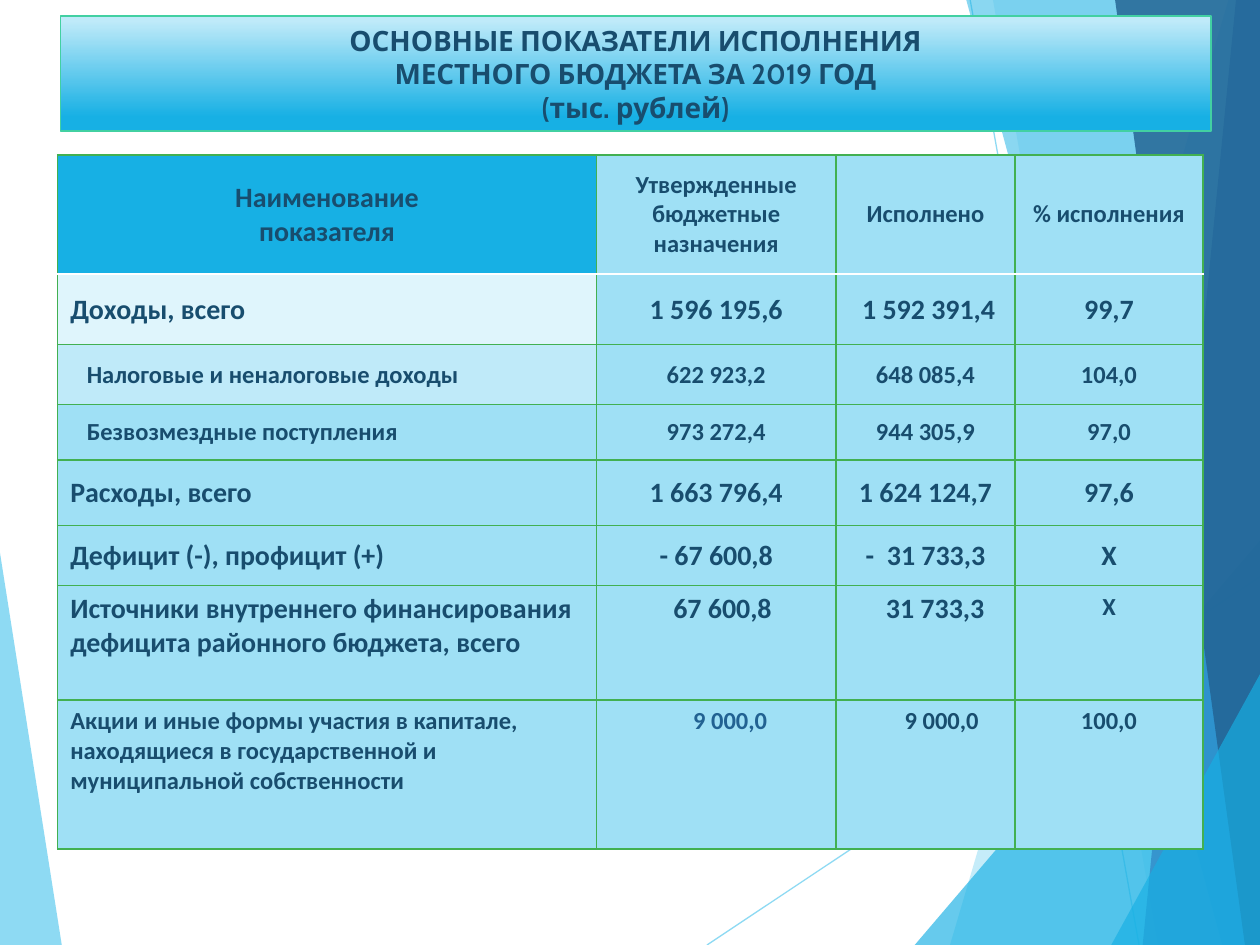
from lxml import etree
from pptx import Presentation
from pptx import util as u
from pptx.dml.color import RGBColor
from pptx.enum import shapes, text
from pptx.oxml import ns

Pt = u.Pt
WIDTH, HEIGHT = 720, 540
COLORS = {
    "text": "184D6E", "accent_text": "226292", "border": "42B051",
    "white": "FFFFFF", "title_line": "42D0A2", "title_top": "BFEAF9",
    "azure": "17B0E4", "sky": "5FCBEF", "blue": "2E83C3", "navy": "226292",
    "cell": "9FE0F5", "total": "DFF5FC", "tax": "BFEAF9",
}
CENTER, LEFT = text.PP_ALIGN.CENTER, text.PP_ALIGN.LEFT

# Background facets: points, colour, opacity in percent
LEFT_FACET = ([(0, 316), (35.3, 540), (0, 540)], "sky", 70)
RIGHT_FACETS = [  # top x (or y on the right edge), bottom x
    ((702, 0), 542.9, "sky", 36),
    ((567.4, 0), 661.7, "sky", 20),
    ((720, 308.9), 522.7, "azure", 66),
    ((552.2, 0), 698.4, "azure", 50),
    ((706.3, 0), 653, "blue", 70),
    ((637.2, 0), 711.4, "navy", 82),
    ((720, 385.2), 635, "azure", 66),
]
BACK_LINES = [((404, 540), (720, 329.5)), ((554.4, 0), (650.9, 540))]

TITLE = ["ОСНОВНЫЕ ПОКАЗАТЕЛИ ИСПОЛНЕНИЯ",
         "МЕСТНОГО БЮДЖЕТА ЗА 2019 ГОД", "(тыс. рублей)"]
COLUMN_WIDTHS = [307.8, 137, 102.2, 107.5]
ROW_HEIGHTS = [68.2, 40.3, 34.3, 31.7, 37.4, 34.3, 65.5, 85.1]
ROW_SIZES = [14, 16, 14, 14, 16, 16, 16, 14]
ROWS = [
    ["Наименование\nпоказателя", "Утвержденные бюджетные\nназначения",
     "Исполнено", "% исполнения"],
    ["Доходы, всего", "1 596 195,6", "1 592 391,4", "99,7"],
    ["Налоговые и неналоговые доходы", "622 923,2", "648 085,4", "104,0"],
    ["Безвозмездные поступления", "973 272,4", "944 305,9", "97,0"],
    ["Расходы, всего", "1 663 796,4", "1 624 124,7", "97,6"],
    ["Дефицит (-), профицит (+)", "- 67 600,8", "-  31 733,3", "Х"],
    ["Источники внутреннего финансирования дефицита районного бюджета, всего",
     "67 600,8", "31 733,3", "Х"],
    ["Акции и иные формы участия в капитале, находящиеся в государственной "
     "и муниципальной собственности", "9 000,0", "9 000,0", "100,0"],
]
# Exceptions by (row, column)
FILLS = {(0, 0): "azure", (1, 0): "total", (2, 0): "tax"}
SIZES = {(0, 0): 16, (6, 3): 14}
INDENTS = {(1, 2): 3.6, (2, 0): 9.4, (3, 0): 9.4, (6, 1): 7.2,
           (6, 2): 11, (7, 1): 16, (7, 2): 32}
TEXT_COLORS = {(7, 1): "accent_text"}
LEFT_ALIGNED = {(7, 2)}


def rgb(name):
    return RGBColor.from_string(COLORS[name])


def set_opacity(shape, percent):
    for color in shape.element.spPr.iter(ns.qn("a:srgbClr")):
        etree.SubElement(color, ns.qn("a:alpha"), val=str(percent * 1000))


def add_facet(slide, points, color, opacity):
    corners = [(Pt(x), Pt(y)) for x, y in points]
    builder = slide.shapes.build_freeform(*corners[0])
    builder.add_line_segments(corners[1:], close=True)
    shape = builder.convert_to_shape()
    shape.shadow.inherit = False
    shape.line.fill.background()
    shape.fill.solid()
    shape.fill.fore_color.rgb = rgb(color)
    set_opacity(shape, opacity)


def add_back_line(slide, start, end):
    line = slide.shapes.add_connector(
        shapes.MSO_CONNECTOR.STRAIGHT, *(Pt(v) for v in start + end))
    line.line.color.rgb = rgb("sky")
    line.line.width = Pt(0.75)
    set_opacity(line, 70)
    etree.SubElement(line.element.spPr, ns.qn("a:effectLst"))


def write_lines(frame, lines, font, size, color, align):
    for index, line in enumerate(lines):
        paragraph = frame.paragraphs[0] if index == 0 else frame.add_paragraph()
        paragraph.alignment = align
        run = paragraph.add_run()
        run.text = line
        run.font.name, run.font.size, run.font.bold = font, Pt(size), True
        run.font.color.rgb = rgb(color)


def format_title(title):
    title.left, title.top = Pt(34.5), Pt(9.2)
    title.width, title.height = Pt(657.5), Pt(65.5)
    title.fill.gradient()
    title.fill.gradient_angle = 270
    stops = zip(title.fill.gradient_stops, [("title_top", 0.04), ("azure", 0.88)])
    for stop, (color, position) in stops:
        stop.color.rgb, stop.position = rgb(color), position
    title.line.color.rgb = rgb("title_line")
    title.line.width = Pt(1)
    frame = title.text_frame
    frame.auto_size = text.MSO_AUTO_SIZE.NONE
    frame.word_wrap = True
    frame.vertical_anchor = text.MSO_ANCHOR.MIDDLE
    write_lines(frame, TITLE, "Cabin", 16, "text", CENTER)
    # Bring the title in front of the facets
    title.element.getparent().append(title.element)


def set_borders(cell, sides):
    properties = cell._tc.get_or_add_tcPr()
    for index, (side, (color, width)) in enumerate(sides.items()):
        line = etree.Element(ns.qn(f"a:ln{side}"), w=str(Pt(width)))
        fill = etree.SubElement(line, ns.qn("a:solidFill"))
        etree.SubElement(fill, ns.qn("a:srgbClr"), val=COLORS[color])
        properties.insert(index, line)


def format_cell(cell, row, column):
    key = (row, column)
    cell.fill.solid()
    cell.fill.fore_color.rgb = rgb(FILLS.get(key, "cell"))
    cell.margin_left = Pt(7.2 + INDENTS.get(key, 0))
    cell.vertical_anchor = text.MSO_ANCHOR.MIDDLE if row < 6 else text.MSO_ANCHOR.TOP
    is_label = column == 0 and row > 0
    align = LEFT if is_label or key in LEFT_ALIGNED else CENTER
    write_lines(cell.text_frame, ROWS[row][column].split("\n"), "Calibri",
                SIZES.get(key, ROW_SIZES[row]), TEXT_COLORS.get(key, "text"), align)
    borders = dict.fromkeys("LRTB", ("border", 1))
    if row < 2:  # white rule under the header
        borders["B" if row == 0 else "T"] = ("white", 1.5)
    set_borders(cell, borders)


def add_budget_table(slide):
    table = slide.shapes.add_table(
        len(ROWS), len(COLUMN_WIDTHS), Pt(33), Pt(88.5),
        Pt(sum(COLUMN_WIDTHS)), Pt(sum(ROW_HEIGHTS))).table
    table.first_row = table.horz_banding = False
    for column, width in zip(table.columns, COLUMN_WIDTHS):
        column.width = Pt(width)
    for row, height in enumerate(ROW_HEIGHTS):
        table.rows[row].height = Pt(height)
        for column in range(len(COLUMN_WIDTHS)):
            format_cell(table.cell(row, column), row, column)


def main():
    presentation = Presentation()
    presentation.slide_width, presentation.slide_height = Pt(WIDTH), Pt(HEIGHT)
    slide = presentation.slides.add_slide(presentation.slide_layouts[5])

    # Background
    add_facet(slide, *LEFT_FACET)
    for start, end in BACK_LINES:
        add_back_line(slide, start, end)
    for top, bottom, color, opacity in RIGHT_FACETS:
        points = [top, (bottom, HEIGHT), (WIDTH, HEIGHT)]
        if top[0] < WIDTH:
            points.append((WIDTH, 0))
        add_facet(slide, points, color, opacity)

    # Content
    format_title(slide.shapes.title)
    add_budget_table(slide)
    presentation.save("out.pptx")


if __name__ == "__main__":
    main()
